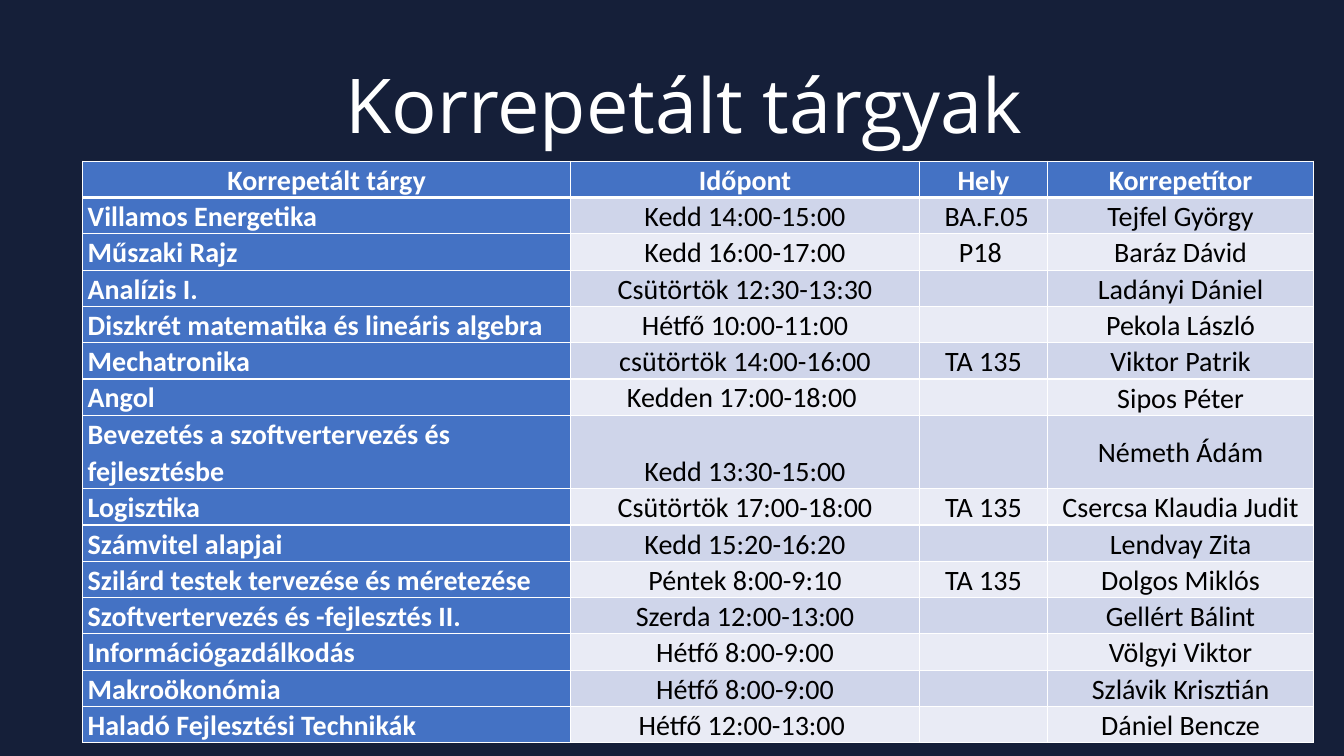
from dataclasses import dataclass

from lxml import etree
from pptx import Presentation
from pptx import util as u
from pptx.dml.color import RGBColor
from pptx.enum import text
from pptx.oxml import ns


@dataclass(frozen=True)
class Theme:
    background: str = "151F39"
    accent: str = "4472C4"
    bands: tuple = ("CFD5EA", "E9EBF5")
    light: str = "FFFFFF"
    dark: str = "000000"
    title_font: str = "Open Sans"
    body_font: str = "Calibri"
    title_size: int = 54
    body_size: int = 20
    border: float = 1
    header_border: float = 3


HEADER = ("Korrepetált tárgy", "Időpont", "Hely", "Korrepetítor")
SUBJECTS = [
    ("Villamos Energetika", "Kedd 14:00-15:00", " BA.F.05", "Tejfel György"),
    ("Műszaki Rajz", "Kedd 16:00-17:00", "P18 ", "Baráz Dávid"),
    ("Analízis I.", "Csütörtök 12:30-13:30", "", "Ladányi Dániel"),
    ("Diszkrét matematika és lineáris algebra", "Hétfő 10:00-11:00", "", "Pekola László"),
    ("Mechatronika", "csütörtök 14:00-16:00", "TA 135", "Viktor Patrik"),
    ("Angol", "Kedden 17:00-18:00 ", "", "Sipos Péter"),
    ("Bevezetés a szoftvertervezés és fejlesztésbe", "Kedd 13:30-15:00", "", "Németh Ádám"),
    ("Logisztika", "Csütörtök 17:00-18:00", "TA 135", "Csercsa Klaudia Judit"),
    ("Számvitel alapjai", "Kedd 15:20-16:20", "", "Lendvay Zita"),
    ("Szilárd testek tervezése és méretezése", "Péntek 8:00-9:10", "TA 135", "Dolgos Miklós"),
    ("Szoftvertervezés és -fejlesztés II.", "Szerda 12:00-13:00", "", "Gellért Bálint"),
    ("Információgazdálkodás", "Hétfő 8:00-9:00", "", "Völgyi Viktor"),
    ("Makroökonómia", "Hétfő 8:00-9:00", "", "Szlávik Krisztián"),
    ("Haladó Fejlesztési Technikák", "Hétfő 12:00-13:00 ", "", "Dániel Bencze"),
]
COLUMN_WIDTHS = (4.84, 3.46, 1.27, 2.64)
ROW_HEIGHT = 0.36
LONG_ROW = 7
LONG_ROW_HEIGHT = 0.73
ANCHORS = (text.MSO_ANCHOR.BOTTOM, text.MSO_ANCHOR.BOTTOM,
           text.MSO_ANCHOR.TOP, text.MSO_ANCHOR.MIDDLE)


def apply(target, values):
    for name, value in values.items():
        setattr(target, name, value)


class SlideBuilder:
    def __init__(self, prs, theme):
        self.theme = theme
        self.s = prs.slides.add_slide(prs.slide_layouts[6])
        self.paint(self.s.background.fill, theme.background)

    def paint(self, fill, color):
        fill.solid()
        fill.fore_color.rgb = RGBColor.from_string(color)

    def add_text(self, p, words, color, paragraph, font):
        apply(p, paragraph)
        r = p.add_run()
        r.text = words
        apply(r.font, font)
        r.font.color.rgb = RGBColor.from_string(color)

    def title(self, words, left, top, width, height):
        box = self.s.shapes.add_textbox(*map(u.Inches, (left, top, width, height)))
        tf = box.text_frame
        apply(tf, {"word_wrap": True, "vertical_anchor": text.MSO_ANCHOR.MIDDLE})
        self.add_text(tf.paragraphs[0], words, self.theme.light,
                      {"alignment": text.PP_ALIGN.CENTER, "line_spacing": 0.9},
                      {"name": self.theme.title_font, "size": u.Pt(self.theme.title_size)})

    def borders(self, cell, row):
        tcPr = cell._tc.get_or_add_tcPr()
        for side in "LRTB":
            thick = (row, side) in ((0, "B"), (1, "T"))
            width = self.theme.header_border if thick else self.theme.border
            ln = etree.SubElement(tcPr, ns.qn(f"a:ln{side}"), w=str(u.Pt(width)))
            fill = etree.SubElement(ln, ns.qn("a:solidFill"))
            etree.SubElement(fill, ns.qn("a:srgbClr"), val=self.theme.light)

    def cell(self, cell, words, row, col):
        theme = self.theme
        strong = row == 0 or col == 0
        apply(cell, {
            "margin_left": u.Inches(0.05), "margin_right": u.Inches(0.05),
            "margin_top": 0, "margin_bottom": 0,
            "vertical_anchor": ANCHORS[col] if row else text.MSO_ANCHOR.BOTTOM,
        })
        self.borders(cell, row)
        self.paint(cell.fill, theme.accent if strong else theme.bands[(row - 1) % 2])
        if words:
            left = row > 0 and col == 0
            self.add_text(cell.text_frame.paragraphs[0], words,
                          theme.light if strong else theme.dark,
                          {"alignment": text.PP_ALIGN.LEFT if left else text.PP_ALIGN.CENTER,
                           "line_spacing": 1.07, "space_after": u.Pt(8)},
                          {"name": theme.body_font, "size": u.Pt(theme.body_size),
                           "bold": strong})

    def table(self, rows, left, top):
        heights = [LONG_ROW_HEIGHT if i == LONG_ROW else ROW_HEIGHT
                   for i in range(len(rows))]
        size = (left, top, sum(COLUMN_WIDTHS), sum(heights))
        table = self.s.shapes.add_table(
            len(rows), len(COLUMN_WIDTHS), *map(u.Inches, size)).table
        for column, width in zip(table.columns, COLUMN_WIDTHS):
            column.width = u.Inches(width)
        for i, (row, height) in enumerate(zip(rows, heights)):
            table.rows[i].height = u.Inches(height)
            for j, words in enumerate(row):
                self.cell(table.cell(i, j), words, i, j)


def main():
    prs = Presentation()
    apply(prs, {"slide_width": u.Inches(13.33), "slide_height": u.Inches(7.5)})
    slide = SlideBuilder(prs, Theme())

    # Title
    slide.title("Korrepetált tárgyak", 1.58, 0.7, 10.41, 0.77)

    # Timetable of tutored subjects
    slide.table([HEADER, *SUBJECTS], 0.82, 1.6)

    prs.save("out.pptx")


if __name__ == "__main__":
    main()
